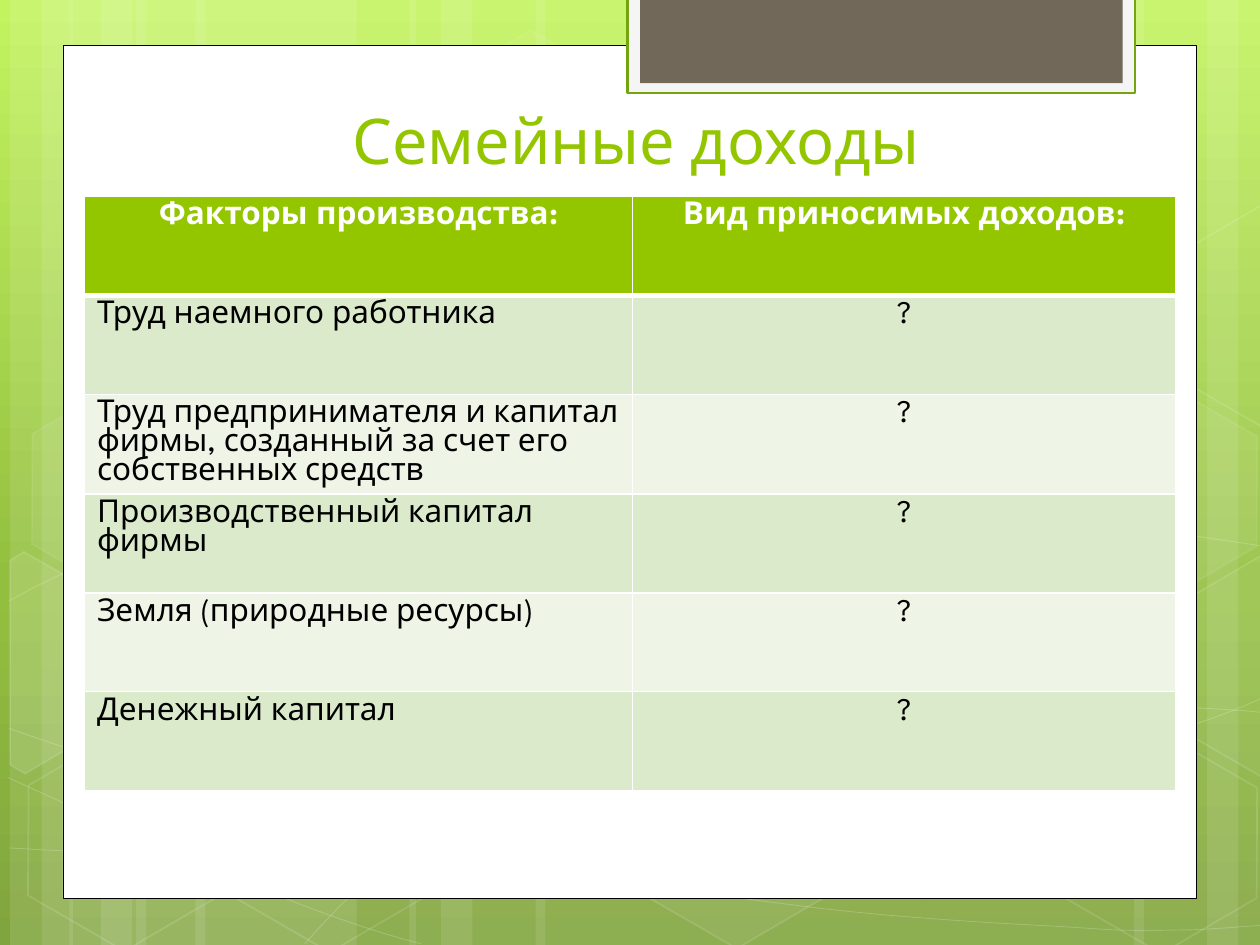
from copy import deepcopy
from dataclasses import dataclass
from typing import NamedTuple

from lxml.etree import SubElement
from pptx import Presentation
from pptx.dml.color import RGBColor
from pptx.enum.shapes import MSO_SHAPE as Shape
from pptx.enum.text import MSO_ANCHOR as Anchor, PP_ALIGN as Align
from pptx.oxml.ns import qn
from pptx.util import Inches, Pt


class Box(NamedTuple):
    left: float
    top: float
    width: float
    height: float

    def emu(self):
        return [Inches(length) for length in self]


@dataclass(frozen=True)
class Theme:
    font: str = "League Spartan"
    title_size: int = 36
    table_size: int = 18
    white: str = "FFFFFF"
    black: str = "000000"
    accent: str = "94C600"
    tab_fill: str = "F5F5F5"
    tab_line: str = "74A510"
    tab_core: str = "71685A"
    bands: tuple = ("DCEACC", "EEF5E7")
    sky: tuple = ((0, "C3F35F"), (0.62, "93BF3F"), (1, "81A53E"))


THEME = Theme()
FULL = Box(0, 0, 10, 7.5)

STRIPS = [(1.08, 1.75), (0.08, 0.5), (0.33, 0.83), (1.55, 1.75), (0.55, 0.5), (0.8, 0.83),
          (7.33, 1.75), (9.58, 0.5), (9, 0.83), (4.25, 3.08), (3.25, 0.5), (3.5, 0.83)]

WAVES = [
    [(0.07, 6.73), (0.61, 6.76), (1.15, 6.79), (1.9, 6.78), (2.65, 6.77), (3.58, 6.75),
     (4.58, 6.65), (5.58, 6.55), (7, 6.36), (7.92, 6.17), (8.83, 5.98), (9.77, 5.68),
     (10.07, 5.51)],
    [(0.07, 4.77), (0.36, 4.61), (0.65, 4.46), (1.21, 4.31), (1.78, 4.16), (2.59, 3.94),
     (3.47, 3.87), (4.36, 3.8), (5.44, 3.79), (6.54, 3.87), (7.64, 3.95), (9.47, 4.26),
     (10.07, 4.34)],
    [(0.06, 6.17), (1.27, 6.72), (2.47, 7.27), (3.34, 7.49)],
    [(0.07, 5.78), (0.38, 5.89), (0.7, 6), (1.28, 6.16), (1.86, 6.31), (2.73, 6.56),
     (3.57, 6.73), (4.4, 6.9), (5.45, 7.08), (6.28, 7.18), (7.11, 7.29), (8, 7.33),
     (8.53, 7.36), (9.05, 7.4), (9.19, 7.38), (9.45, 7.38), (9.71, 7.37), (9.89, 7.35),
     (10.07, 7.34)],
    [(2.42, 7.49), (2.6, 7.29), (2.78, 7.09), (3.02, 6.91), (3.26, 6.73), (3.6, 6.53),
     (3.88, 6.39), (4.16, 6.25), (4.33, 6.19), (4.7, 6.09), (5.06, 5.99), (5.73, 5.85),
     (6.08, 5.78), (6.44, 5.71), (6.49, 5.71), (6.8, 5.69), (7.11, 5.66), (7.6, 5.63),
     (7.94, 5.62), (8.29, 5.61), (8.86, 5.62), (8.86, 5.62), (9.08, 5.62), (9.31, 5.62),
     (9.53, 5.62), (9.71, 5.63), (9.88, 5.64), (9.97, 5.65), (10.06, 5.66), (10.03, 5.65),
     (10.06, 5.66)],
]

HEXAGONS = [(3.34, 0.36, 4, 8), (4.97, 5.89, 6, 12), (0.11, 5.91, 0, 12), (0.14, 3.12, 7, 8),
            (1.74, 5.92, 0, 12), (7.53, 4.53, 10, 12), (8.34, 5.93, 0, 12), (8.34, 3.14, 7, 8)]

CUT_HEXAGONS = [
    ([(0.08, 4.45), (0.19, 4.38), (0.96, 4.82), (0.95, 5.7), (0.2, 6.14), (0.08, 6.07)], 10),
    ([(9.26, 4.85), (10.01, 4.41), (10.09, 4.46), (10.09, 6.13), (10.02, 6.17), (9.26, 5.73)], 4),
    ([(9.26, 2.07), (10.01, 1.63), (10.1, 1.68), (10.09, 3.35), (10.02, 3.39), (9.26, 2.95)], 0),
]

INCOME_ROWS = [
    ("Факторы производства:", "Вид приносимых доходов:"),
    ("Труд наемного работника", "?"),
    ("Труд предпринимателя и капитал фирмы, созданный за счет его собственных средств", "?"),
    ("Производственный капитал фирмы", "?"),
    ("Земля (природные ресурсы)", "?"),
    ("Денежный капитал", "?"),
]


def paint(fill, color, opacity=100):
    if not opacity:
        fill.background()
        return
    fill.solid()
    fill.fore_color.rgb = RGBColor.from_string(color)
    if opacity < 100:
        solid = fill._xPr.find(qn("a:solidFill"))
        SubElement(solid[0], qn("a:alpha"), val=str(opacity * 1000))


def style(shape, fill, opacity=100, line=None, weight=0, line_opacity=100):
    shape.shadow.inherit = False
    paint(shape.fill, fill, opacity)
    if line:
        shape.line.width = Pt(weight)
        paint(shape.line.fill, line, line_opacity)
    else:
        shape.line.fill.background()


def add_block(slide, box, *look, kind=Shape.RECTANGLE):
    block = slide.shapes.add_shape(kind, *box.emu())
    style(block, *look)
    return block


def add_outline(slide, points, closed, *look):
    start, *rest = [(Inches(x), Inches(y)) for x, y in points]
    builder = slide.shapes.build_freeform(*start)
    builder.add_line_segments(rest, close=closed)
    outline = builder.convert_to_shape()
    style(outline, *look)
    return outline


def bend_segments(outline):
    track = next(outline.element.iter(qn("a:path")))
    segments = track.findall(qn("a:lnTo"))
    for first in range(0, len(segments), 3):
        curve = SubElement(track, qn("a:cubicBezTo"))
        for segment in segments[first:first + 3]:
            curve.append(segment[0])
            track.remove(segment)


def fill_background(slide):
    sky = slide.background.fill
    sky.gradient()
    sky.gradient_angle = 270
    stops = next(slide.element.iter(qn("a:gsLst")))
    stops.insert(1, deepcopy(stops[0]))
    for stop, (position, color) in zip(sky.gradient_stops, THEME.sky):
        stop.position = position
        stop.color.rgb = RGBColor.from_string(color)


def add_backdrop(slide, box):
    white = THEME.white
    for left, width in STRIPS:
        add_block(slide, Box(box.left + left, box.top, width, box.height), white, 10)
    for knots in WAVES:
        bend_segments(add_outline(slide, knots, False, white, 0, white, 0.5, 20))
    for left, top, opacity, edge in HEXAGONS:
        hexagon = add_block(slide, Box(box.left + left, box.top + top, 1.75, 1.52),
                            white, opacity, white, 1, edge, kind=Shape.HEXAGON)
        hexagon.adjustments[0] = 0.285
        hexagon.rotation = 30
    for points, opacity in CUT_HEXAGONS:
        add_outline(slide, points, True, white, opacity, white, 1, 12)


def add_sheet(slide, box):
    add_block(slide, box, THEME.white, 100, THEME.black, 0.5)


def add_tab(slide, box):
    margin = 0.1
    core = Box(box.left + margin, box.top, box.width - 2 * margin, box.height - margin + 0.02)
    add_block(slide, box, THEME.tab_fill, 100, THEME.tab_line, 1.25)
    add_block(slide, core, THEME.tab_core)


def format_text(paragraph, size, color, bold, align):
    paragraph.alignment = align
    for run in paragraph.runs:
        run.font.name = THEME.font
        run.font.size = Pt(size)
        run.font.bold = bold
        run.font.color.rgb = RGBColor.from_string(color)


def place_title(slide, box, text):
    title = slide.shapes.title
    slide.shapes._spTree.append(title.element)
    title.left, title.top, title.width, title.height = box.emu()
    title.text_frame.text = text
    title.text_frame.vertical_anchor = Anchor.BOTTOM
    format_text(title.text_frame.paragraphs[0], THEME.title_size, THEME.accent, False, Align.CENTER)


def set_borders(cell, row):
    weights = {"lnL": 1, "lnR": 1, "lnT": 3 if row == 1 else 1, "lnB": 3 if row == 0 else 1}
    properties = cell._tc.get_or_add_tcPr()
    for side, weight in weights.items():
        border = SubElement(properties, qn(f"a:{side}"), w=str(Pt(weight)))
        SubElement(SubElement(border, qn("a:solidFill")), qn("a:srgbClr"), val=THEME.white)


def add_income_table(slide, box, rows):
    factor_width = 4.35
    table = slide.shapes.add_table(len(rows), 2, *box.emu()).table
    table.columns[0].width = Inches(factor_width)
    table.columns[1].width = Inches(box.width - factor_width)
    for r, texts in enumerate(rows):
        header = r == 0
        for c, text in enumerate(texts):
            cell = table.cell(r, c)
            cell.text_frame.text = text
            format_text(cell.text_frame.paragraphs[0], THEME.table_size,
                        THEME.white if header else THEME.black, header,
                        Align.CENTER if header or c else Align.LEFT)
            set_borders(cell, r)
            paint(cell.fill, THEME.accent if header else THEME.bands[(r - 1) % 2])


def main():
    deck = Presentation()
    deck.slide_width, deck.slide_height = Inches(FULL.width), Inches(FULL.height)
    slide = deck.slides.add_slide(deck.slide_layouts[5])
    fill_background(slide)
    add_backdrop(slide, FULL)
    add_sheet(slide, Box(0.5, 0.36, 9, 6.77))
    add_tab(slide, Box(4.98, -0.02, 4.03, 0.76))
    place_title(slide, Box(1.46, 0.75, 7.18, 0.71), "Семейные доходы")
    add_income_table(slide, Box(0.67, 1.56, 8.66, 4.71), INCOME_ROWS)
    deck.save("out.pptx")


if __name__ == "__main__":
    main()
